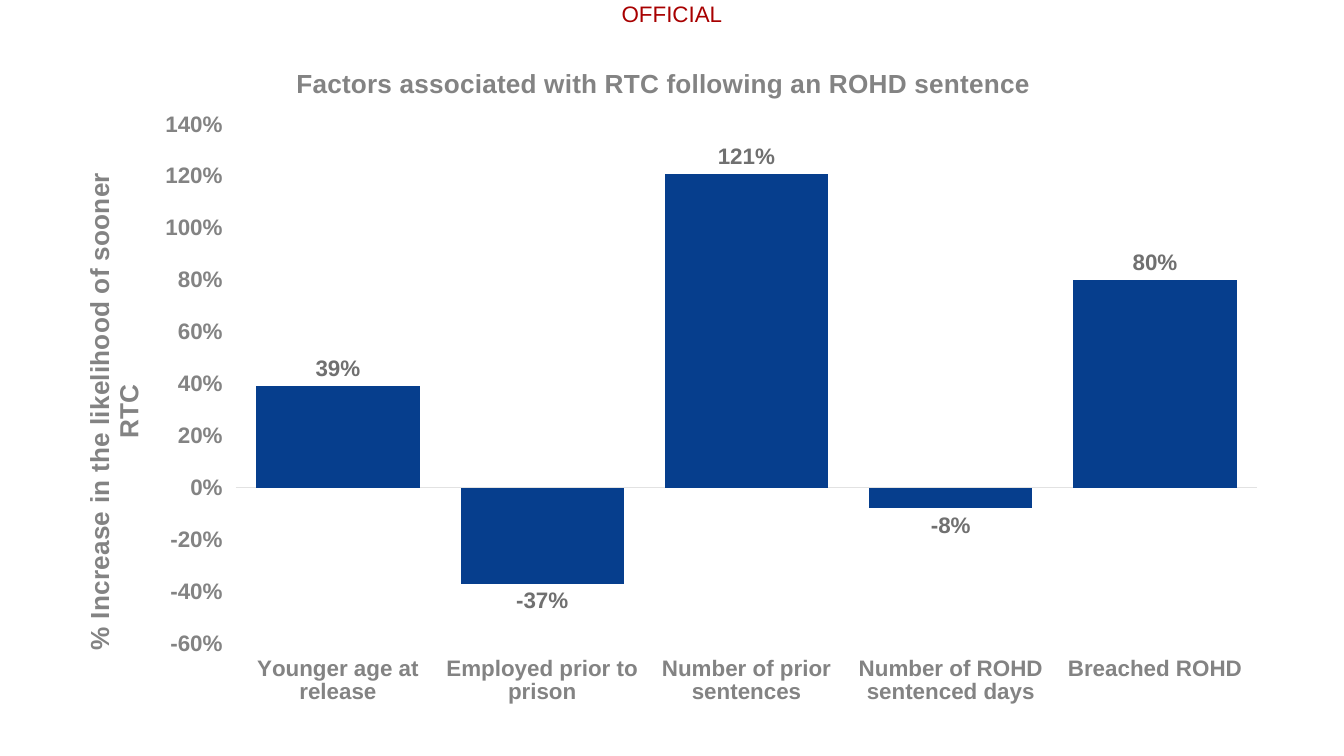
from lxml.etree import SubElement
from pptx import Presentation
from pptx.chart.data import CategoryChartData
from pptx.dml.color import RGBColor
from pptx.enum.chart import (XL_CHART_TYPE, XL_LABEL_POSITION, XL_TICK_LABEL_POSITION,
                             XL_TICK_MARK)
from pptx.enum.text import MSO_AUTO_SIZE, PP_ALIGN
from pptx.oxml.ns import qn
from pptx.util import Pt

PAGE_WIDTH, PAGE_HEIGHT = 1344, 756
EMU_PER_PX = 9144000 / PAGE_WIDTH
FONT = "Arial"
MARKING_RED = RGBColor(0xA8, 0x00, 0x00)
BAR_BLUE = RGBColor(0x06, 0x3E, 0x8D)
AXIS_GREY = RGBColor(0x83, 0x83, 0x83)
LABEL_GREY = RGBColor(0x70, 0x70, 0x70)
LINE_GREY = RGBColor(0xE2, 0xE2, 0xE2)
FACTORS = {
    "Younger age at release": 0.39,
    "Employed prior to prison": -0.37,
    "Number of prior sentences": 1.21,
    "Number of ROHD sentenced days": -0.08,
    "Breached ROHD": 0.8,
}


def emu(px):
    return round(px * EMU_PER_PX)


def style_font(font, size, color, bold=True):
    font.name = FONT
    font.size = Pt(size)
    font.bold = bold
    font.color.rgb = color


def place_part(part, **settings):
    """Give a chart title or plot area a manual layout, in fractions of the chart."""
    layout = part.find(qn("c:layout"))
    if layout is None:
        layout = SubElement(part, qn("c:layout"))
        text = part.find(qn("c:tx"))
        part.insert(0 if text is None else part.index(text) + 1, layout)
    for child in list(layout):
        layout.remove(child)
    manual = SubElement(layout, qn("c:manualLayout"))
    for name, value in settings.items():
        SubElement(manual, qn(f"c:{name}")).set("val", str(value))


def write_title(title, text):
    frame = title.text_frame
    frame.text = text
    style_font(frame.paragraphs[0].font, 14, AXIS_GREY)


def style_axis(axis):
    axis.has_major_gridlines = False
    axis.major_tick_mark = axis.minor_tick_mark = XL_TICK_MARK.NONE
    axis.tick_label_position = XL_TICK_LABEL_POSITION.LOW
    style_font(axis.tick_labels.font, 12, AXIS_GREY)


def add_marking(page, left, top, width, height):
    box = page.shapes.add_textbox(emu(left), emu(top), emu(width), emu(height))
    frame = box.text_frame
    frame.margin_left = frame.margin_right = frame.margin_top = frame.margin_bottom = 0
    frame.word_wrap = True
    frame.auto_size = MSO_AUTO_SIZE.SHAPE_TO_FIT_TEXT
    para = frame.paragraphs[0]
    para.text = "OFFICIAL"
    para.alignment = PP_ALIGN.CENTER
    style_font(para.font, 12, MARKING_RED, bold=False)


def add_factor_chart(page, left, top, width, height):
    data = CategoryChartData(number_format="0%")
    data.categories = list(FACTORS)
    data.add_series("Series 1", list(FACTORS.values()))
    chart = page.shapes.add_chart(XL_CHART_TYPE.COLUMN_CLUSTERED, emu(left), emu(top),
                                  emu(width), emu(height), data).chart
    chart.has_legend = False
    chart.font.name = FONT
    chart.font.size = Pt(10)

    chart.has_title = True
    write_title(chart.chart_title, "Factors associated with RTC following an ROHD sentence")
    place_part(chart.chart_title.element, xMode="edge", yMode="edge", x=0.2, y=0.04)
    place_part(chart.element.find(f".//{qn('c:plotArea')}"), layoutTarget="inner",
               xMode="edge", yMode="edge", x=0.155, y=0.131, w=0.825, h=0.76)

    category_axis, value_axis = chart.category_axis, chart.value_axis
    style_axis(category_axis)
    category_axis.format.line.color.rgb = LINE_GREY
    category_axis.format.line.width = Pt(0.75)

    style_axis(value_axis)
    value_axis.format.line.fill.background()
    value_axis.minimum_scale, value_axis.maximum_scale = -0.6, 1.4
    value_axis.major_unit = 0.2
    value_axis.tick_labels.number_format = "0%"
    value_axis.tick_labels.number_format_is_linked = False
    value_axis.has_title = True
    write_title(value_axis.axis_title, "% Increase in the likelihood of sooner RTC")
    title = value_axis.axis_title.element
    body = title.find(f".//{qn('a:bodyPr')}")
    body.set("rot", "-5400000")
    body.set("vert", "horz")
    place_part(title, xMode="edge", yMode="edge", x=0.027, y=0.195)

    plot = chart.plots[0]
    plot.vary_by_categories = False
    plot.gap_width = 25
    plot.overlap = -27
    bars = plot.series[0]
    bars.invert_if_negative = False
    bars.format.fill.solid()
    bars.format.fill.fore_color.rgb = BAR_BLUE
    labels = bars.data_labels
    labels.show_value = True
    labels.position = XL_LABEL_POSITION.OUTSIDE_END
    labels.number_format = "0%"
    labels.number_format_is_linked = False
    style_font(labels.font, 12, LABEL_GREY)


def main():
    deck = Presentation()
    deck.slide_width, deck.slide_height = emu(PAGE_WIDTH), emu(PAGE_HEIGHT)
    page = deck.slides.add_slide(deck.slide_layouts[6])
    add_marking(page, 618, 0, 108, 27)
    add_factor_chart(page, 44, 35, 1238, 683)
    deck.save("out.pptx")


if __name__ == "__main__":
    main()
